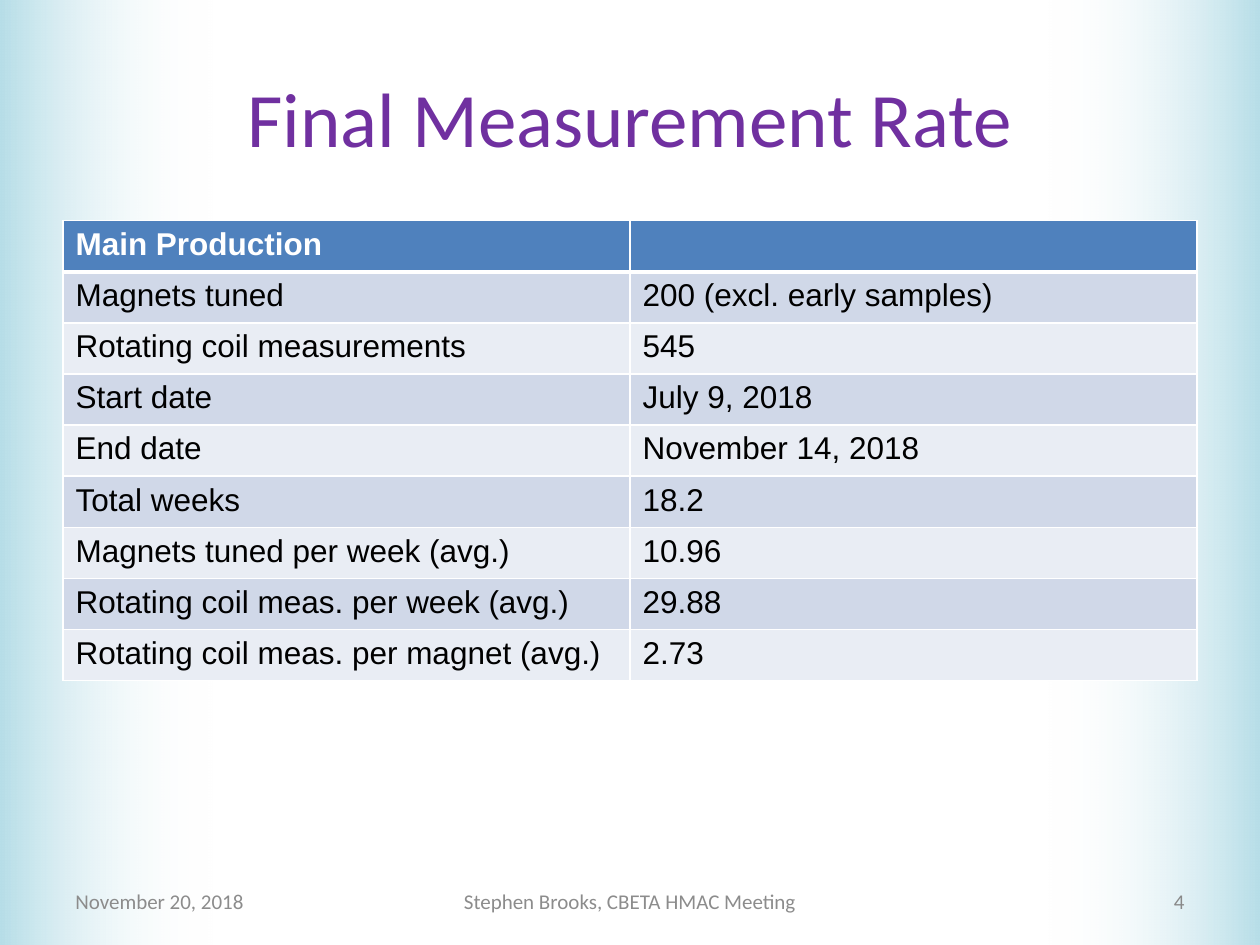
import pptx
import pptx.dml.color
import pptx.enum.text
import pptx.oxml
import pptx.oxml.ns
import pptx.util
from pptx.util import Cm

ALIGN = pptx.enum.text.PP_ALIGN
MIDDLE = pptx.enum.text.MSO_ANCHOR.MIDDLE


def rgb(value):
    return pptx.dml.color.RGBColor.from_string(value)


def write(frame, text, size=18, font="Arial", color="000000", bold=False,
          align=ALIGN.LEFT):
    frame.word_wrap = True
    paragraph = frame.paragraphs[0]
    paragraph.alignment = align
    run = paragraph.add_run()
    run.text = text
    run.font.size = pptx.util.Pt(size)
    run.font.name = font
    run.font.bold = bold
    run.font.color.rgb = rgb(color)


deck = pptx.Presentation()
deck.slide_width, deck.slide_height = Cm(25.4), Cm(19.05)
slide = deck.slides.add_slide(deck.slide_layouts[5])

# Side bands fading towards the middle, placed behind the title
for left, rotation in ((21.11, 180), (0, 0)):
    band = slide.shapes.add_shape(1, Cm(left), 0, Cm(4.29), Cm(19.05))
    band.rotation = rotation
    band.shadow.inherit = False
    band.line.fill.background()
    band.fill.gradient()
    band.fill.gradient_angle = 0
    for stop, color in zip(band.fill.gradient_stops, ("B7DEE8", "FFFFFF")):
        stop.color.rgb = rgb(color)
    clear_end = band._element.xpath(".//a:gs/a:srgbClr")[-1]
    clear_end.append(pptx.oxml.parse_xml(
        f'<a:alpha {pptx.oxml.ns.nsdecls("a")} val="0"/>'))
    slide.shapes.title._element.addprevious(band._element)

# Title
title = slide.shapes.title
title.left, title.top, title.width, title.height = (
    Cm(1.27), Cm(0.76), Cm(22.86), Cm(3.18))
title.text_frame.vertical_anchor = MIDDLE
write(title.text_frame, "Final Measurement Rate", size=44, font="Calibri",
      color="7030A0", align=ALIGN.CENTER)

# Production table
production = [
    ("Main Production", ""),
    ("Magnets tuned", "200 (excl. early samples)"),
    ("Rotating coil measurements", "545"),
    ("Start date", "July 9, 2018"),
    ("End date", "November 14, 2018"),
    ("Total weeks", "18.2"),
    ("Magnets tuned per week (avg.)", "10.96"),
    ("Rotating coil meas. per week (avg.)", "29.88"),
    ("Rotating coil meas. per magnet (avg.)", "2.73"),
]
row_height = Cm(1.03)
table = slide.shapes.add_table(
    len(production), 2, Cm(1.27), Cm(4.45), Cm(22.86),
    row_height * len(production)).table
for row, entries in enumerate(production):
    table.rows[row].height = row_height
    header = row == 0
    fill = "4F81BD" if header else ("E9EDF4", "D0D8E8")[row % 2]
    for column, entry in enumerate(entries):
        cell = table.cell(row, column)
        cell.fill.solid()
        cell.fill.fore_color.rgb = rgb(fill)
        if entry:
            write(cell.text_frame, entry, bold=header,
                  color="FFFFFF" if header else "000000")
        # White borders, heavier around the header's lower edge
        widths = {"lnL": 1, "lnR": 1, "lnT": 3 if row == 1 else 1,
                  "lnB": 3 if header else 1}
        for position, (side, width) in enumerate(widths.items()):
            cell._tc.tcPr.insert(position, pptx.oxml.parse_xml(
                f'<a:{side} {pptx.oxml.ns.nsdecls("a")} w="{width * 12700}">'
                '<a:solidFill><a:srgbClr val="FFFFFF"/></a:solidFill>'
                f'</a:{side}>'))

# Footer
for text, left, width, align, color in (
    ("November 20, 2018", 1.27, 5.93, ALIGN.LEFT, "8C8C8C"),
    ("Stephen Brooks, CBETA HMAC Meeting", 8.68, 8.04, ALIGN.CENTER, "8C8C8C"),
    ("4", 18.2, 5.93, ALIGN.RIGHT, "898989"),
):
    footer = slide.shapes.add_textbox(Cm(left), Cm(17.66), Cm(width), Cm(1.01))
    footer.text_frame.vertical_anchor = MIDDLE
    write(footer.text_frame, text, size=12, font="Calibri", color=color,
          align=align)

deck.save("out.pptx")
